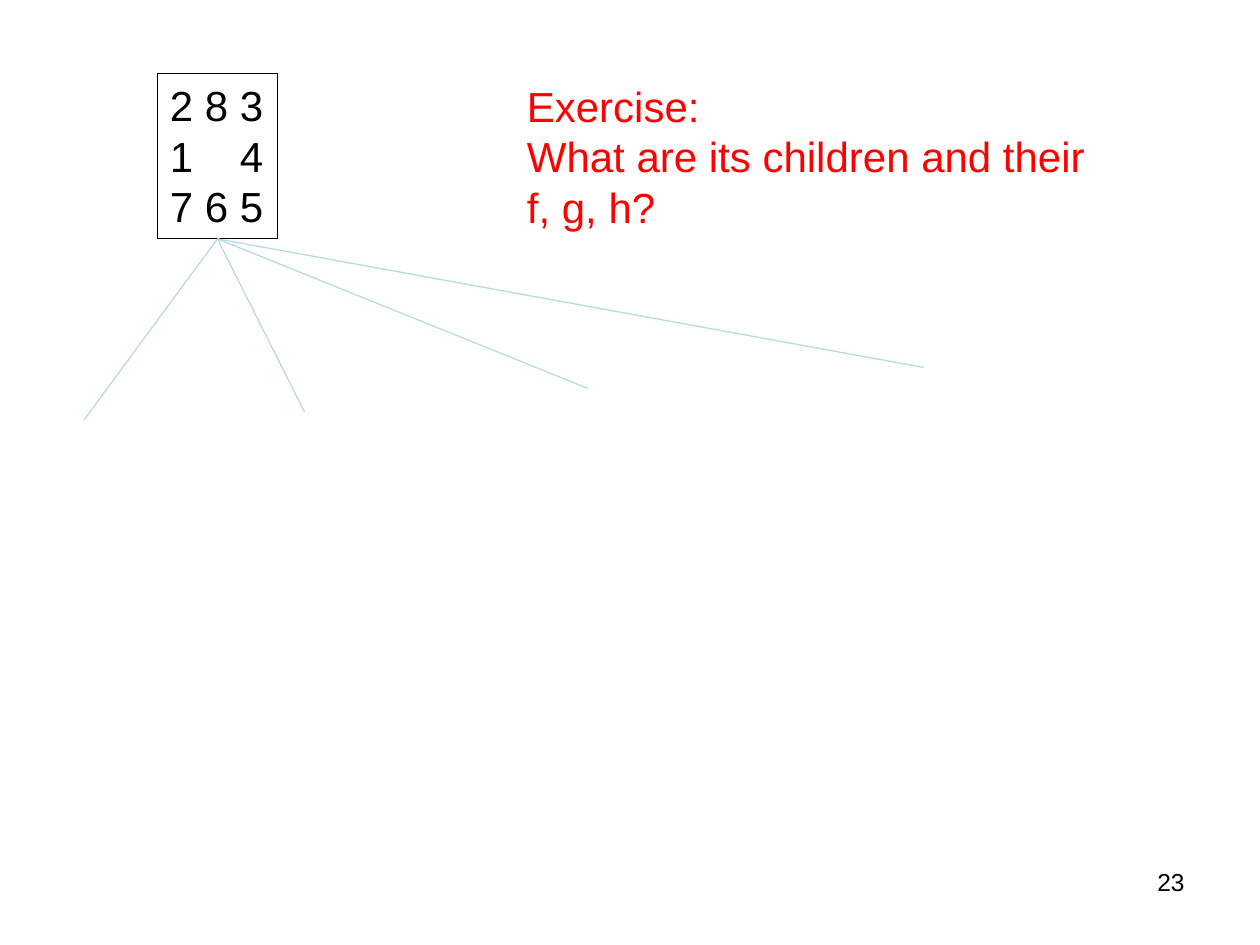
import pptx
import pptx.util
import pptx.dml.color
import pptx.enum.shapes
import pptx.enum.text
import pptx.oxml
import pptx.oxml.ns

Pt = pptx.util.Pt
RGBColor = pptx.dml.color.RGBColor
ALIGN = pptx.enum.text.PP_ALIGN

BLACK = RGBColor(0x00, 0x00, 0x00)
RED = RGBColor(0xFF, 0x00, 0x00)
PALE_TEAL = RGBColor(0xB6, 0xDC, 0xDF)
FONT = "Arial"

PUZZLE_ROWS = ["2 8 3", "1\t4", "7 6 5"]
EXERCISE = ["Exercise:", "What are its children and their", "f, g, h?"]
PAGE_NUMBER = ["23"]
CHILD_ENDS = [(48, 240), (174, 235.5), (336, 222), (528, 210)]

PUZZLE_BOX = (90, 42, 68.5, 94.5)
EXERCISE_BOX = (294, 42.5, 337, 94.5)
NUMBER_BOX = (516, 492, 168, 37.5)
THIRD_COLUMN = 40


def write(shape, lines, size, color, align=ALIGN.LEFT, wrap=True):
    frame = shape.text_frame
    frame.word_wrap = wrap
    frame.vertical_anchor = pptx.enum.text.MSO_ANCHOR.TOP
    for index, line in enumerate(lines):
        paragraph = frame.paragraphs[0] if index == 0 else frame.add_paragraph()
        paragraph.alignment = align
        run = paragraph.add_run()
        run.text = line
        run.font.name = FONT
        run.font.size = Pt(size)
        run.font.color.rgb = color


def add_tab_stop(paragraph, position):
    properties = paragraph._p.get_or_add_pPr()
    stops = pptx.oxml.parse_xml(
        f'<a:tabLst {pptx.oxml.ns.nsdecls("a")}>'
        f'<a:tab pos="{Pt(position)}" algn="l"/></a:tabLst>'
    )
    properties.append(stops)


def add_branch(slide, parent, end):
    branch = slide.shapes.add_connector(
        pptx.enum.shapes.MSO_CONNECTOR.STRAIGHT, 0, 0, *map(Pt, end)
    )
    branch.begin_connect(parent, 2)
    branch.line.color.rgb = PALE_TEAL
    branch.line.width = Pt(0.75)
    branch._element.spPr.append(
        pptx.oxml.parse_xml(f'<a:effectLst {pptx.oxml.ns.nsdecls("a")}/>')
    )


def main():
    deck = pptx.Presentation()
    deck.slide_width, deck.slide_height = Pt(720), Pt(540)
    slide = deck.slides.add_slide(deck.slide_layouts[6])

    number = slide.shapes.add_textbox(*map(Pt, NUMBER_BOX))
    write(number, PAGE_NUMBER, 14, BLACK, ALIGN.RIGHT)

    puzzle = slide.shapes.add_shape(
        pptx.enum.shapes.MSO_SHAPE.RECTANGLE, *map(Pt, PUZZLE_BOX)
    )
    puzzle.shadow.inherit = False
    puzzle.fill.background()
    puzzle.line.color.rgb = BLACK
    puzzle.line.width = Pt(0.75)
    write(puzzle, PUZZLE_ROWS, 24, BLACK, wrap=False)
    add_tab_stop(puzzle.text_frame.paragraphs[1], THIRD_COLUMN)

    exercise = slide.shapes.add_textbox(*map(Pt, EXERCISE_BOX))
    write(exercise, EXERCISE, 24, RED)

    for end in CHILD_ENDS:
        add_branch(slide, puzzle, end)

    deck.save("out.pptx")


if __name__ == "__main__":
    main()
